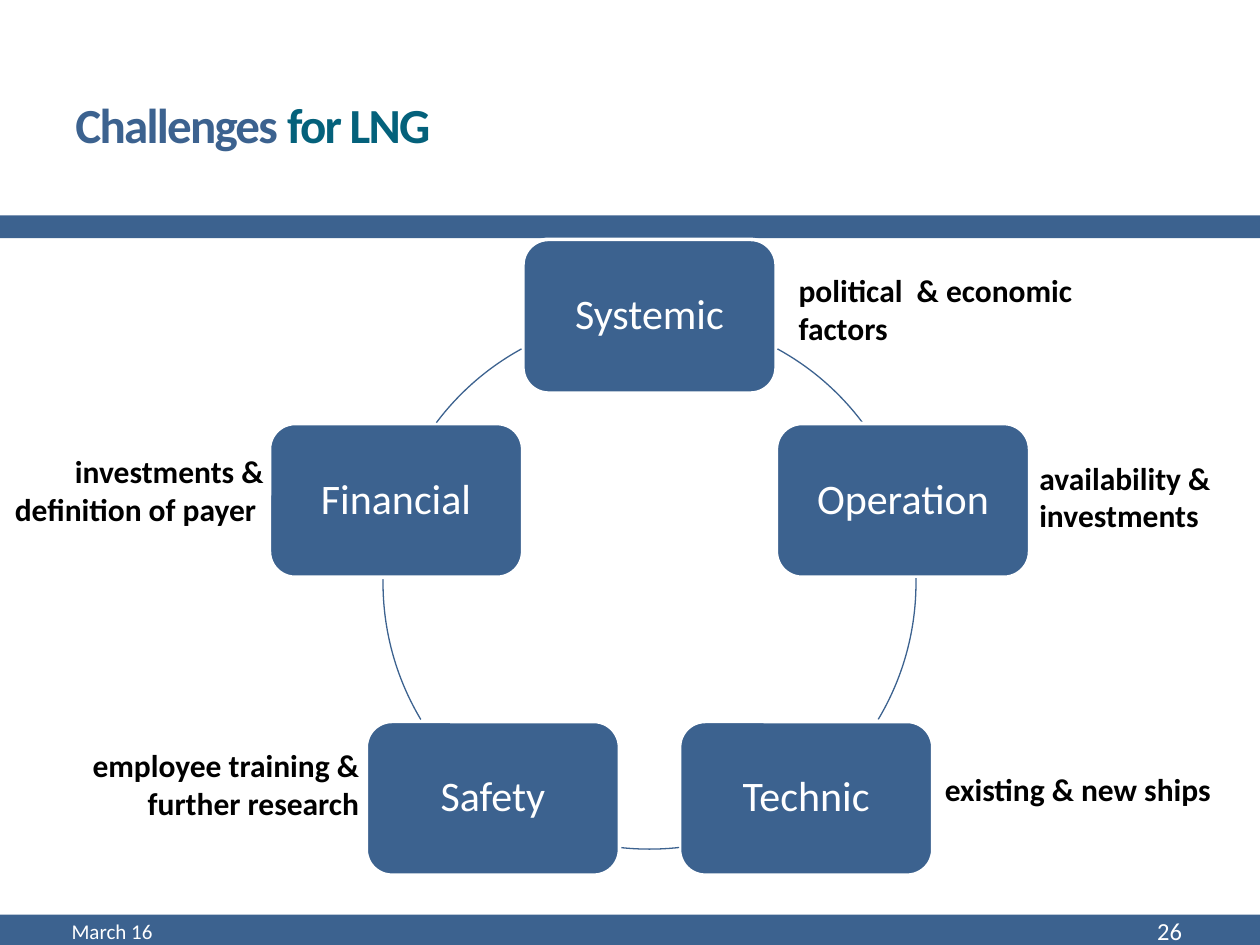
"""Build the LNG challenges slide: a ring of five topic cards with side notes."""
from math import cos, radians, sin

from pptx import Presentation
from pptx.dml.color import RGBColor
from pptx.enum.shapes import MSO_SHAPE
from pptx.enum.text import MSO_ANCHOR, PP_ALIGN
from pptx.util import Inches, Pt

BLUE = RGBColor(0x3C, 0x62, 0x8F)
TEAL = RGBColor(0x04, 0x61, 0x7B)
WHITE = RGBColor(0xFF, 0xFF, 0xFF)
BLACK = RGBColor(0x00, 0x00, 0x00)

WIDTH, HEIGHT = Inches(10), Inches(7.5)
COLUMNS, ROWS = 100, 75
RING_COLUMN, RING_ROW, RING_RADIUS = 51.55, 46.25, 21.15
CARD_COLUMNS, CARD_ROWS = 20.1, 12.2

TOPICS = ["Systemic", "Operation", "Technic", "Safety", "Financial"]
ARCS = [(298.7, 323.1), (359, 30.9), (83.6, 96.4), (149.1, 181), (216.9, 241.3)]
NOTES = [
    ((62.4, 21, 26, 7.1), PP_ALIGN.LEFT, ["political  & economic factors"]),
    ((81.5, 35.9, 16.5, 10.1), PP_ALIGN.LEFT, ["availability &", "investments"]),
    ((74, 60.6, 26, 4), PP_ALIGN.LEFT, ["existing & new ships"]),
    ((3.5, 58.7, 26, 7.1), PP_ALIGN.RIGHT, ["employee training & further research"]),
    ((-4.1, 35.4, 26, 7.1), PP_ALIGN.RIGHT, ["investments & definition of payer "]),
]


def place(column, row, columns, rows):
    """Turn grid columns and rows into slide lengths."""
    return (int(WIDTH * column / COLUMNS), int(HEIGHT * row / ROWS),
            int(WIDTH * columns / COLUMNS), int(HEIGHT * rows / ROWS))


def apply(target, values):
    """Set each named format value on the target."""
    for name, value in values.items():
        setattr(target, name, value)


def add_words(paragraph, words, size, color, bold=False):
    """Append a formatted run and return it."""
    run = paragraph.add_run()
    run.text = words
    apply(run.font, {"name": "Calibri", "size": Pt(size), "bold": bold})
    run.font.color.rgb = color
    return run


def add_label(slide, cell, anchor=MSO_ANCHOR.MIDDLE):
    """Add an empty wrapping text box and return its frame."""
    frame = slide.shapes.add_textbox(*place(*cell)).text_frame
    apply(frame, {"word_wrap": True, "vertical_anchor": anchor})
    return frame


def add_title(slide):
    """Add the two-colour, slightly condensed title."""
    heading = add_label(slide, (5, 4.4, 52.1, 10.8)).paragraphs[0]
    for words, color in (("Challenges", BLUE), (" for LNG", TEAL)):
        run = add_words(heading, words, 28, color, bold=True)
        run.font._element.set("spc", "-100")


def add_band(slide, row, rows):
    """Add a full-width blue band."""
    band = slide.shapes.add_shape(MSO_SHAPE.RECTANGLE, *place(0, row, COLUMNS, rows))
    band.shadow.inherit = False
    band.fill.solid()
    band.fill.fore_color.rgb = BLUE
    band.line.fill.background()


def add_footer(slide, cell, words, size, alignment):
    """Add one white footer entry."""
    entry = add_label(slide, cell).paragraphs[0]
    entry.alignment = alignment
    add_words(entry, words, size, WHITE)


def add_card(slide, topic, angle):
    """Add a topic card centred on the ring at the given angle."""
    column = RING_COLUMN + RING_RADIUS * cos(radians(angle)) - CARD_COLUMNS / 2
    row = RING_ROW + RING_RADIUS * sin(radians(angle)) - CARD_ROWS / 2
    card = slide.shapes.add_shape(MSO_SHAPE.ROUNDED_RECTANGLE,
                                  *place(column, row, CARD_COLUMNS, CARD_ROWS))
    card.shadow.inherit = False
    card.fill.solid()
    card.fill.fore_color.rgb = BLUE
    card.line.color.rgb = WHITE
    card.line.width = Pt(2.08)
    apply(card.text_frame, {"word_wrap": True, "vertical_anchor": MSO_ANCHOR.MIDDLE})
    caption = card.text_frame.paragraphs[0]
    apply(caption, {"alignment": PP_ALIGN.CENTER, "line_spacing": 0.9})
    add_words(caption, topic, 24, WHITE)


def add_ring_arc(slide, start, end):
    """Add the part of the ring between two clockwise angles in degrees."""
    arc = slide.shapes.add_shape(
        MSO_SHAPE.ARC, *place(RING_COLUMN - RING_RADIUS, RING_ROW - RING_RADIUS,
                              2 * RING_RADIUS, 2 * RING_RADIUS))
    arc.shadow.inherit = False
    arc.fill.background()
    arc.line.color.rgb = BLUE
    arc.line.width = Pt(0.75)
    for index, degrees in enumerate((start, end)):
        arc.adjustments[index] = degrees * 0.6


def add_note(slide, cell, alignment, lines):
    """Add the bold note beside a card."""
    frame = add_label(slide, cell, MSO_ANCHOR.TOP)
    for index, words in enumerate(lines):
        paragraph = frame.add_paragraph() if index else frame.paragraphs[0]
        paragraph.alignment = alignment
        add_words(paragraph, words, 18, BLACK, bold=True)


def main():
    """Assemble and save the slide."""
    deck = Presentation()
    apply(deck, {"slide_width": WIDTH, "slide_height": HEIGHT})
    slide = deck.slides.add_slide(deck.slide_layouts[6])
    add_band(slide, 72.6, 2.4)
    add_band(slide, 17.1, 1.8)
    add_title(slide)
    add_footer(slide, (4.7, 72.1, 31.7, 3.6), "March 16", 12, PP_ALIGN.LEFT)
    add_footer(slide, (83.1, 72.1, 11.7, 3.6), "26", 14, PP_ALIGN.RIGHT)
    for index, (topic, arc) in enumerate(zip(TOPICS, ARCS)):
        add_card(slide, topic, index * 360 / len(TOPICS) - 90)
        add_ring_arc(slide, *arc)
    for note in NOTES:
        add_note(slide, *note)
    deck.save("out.pptx")


if __name__ == "__main__":
    main()
